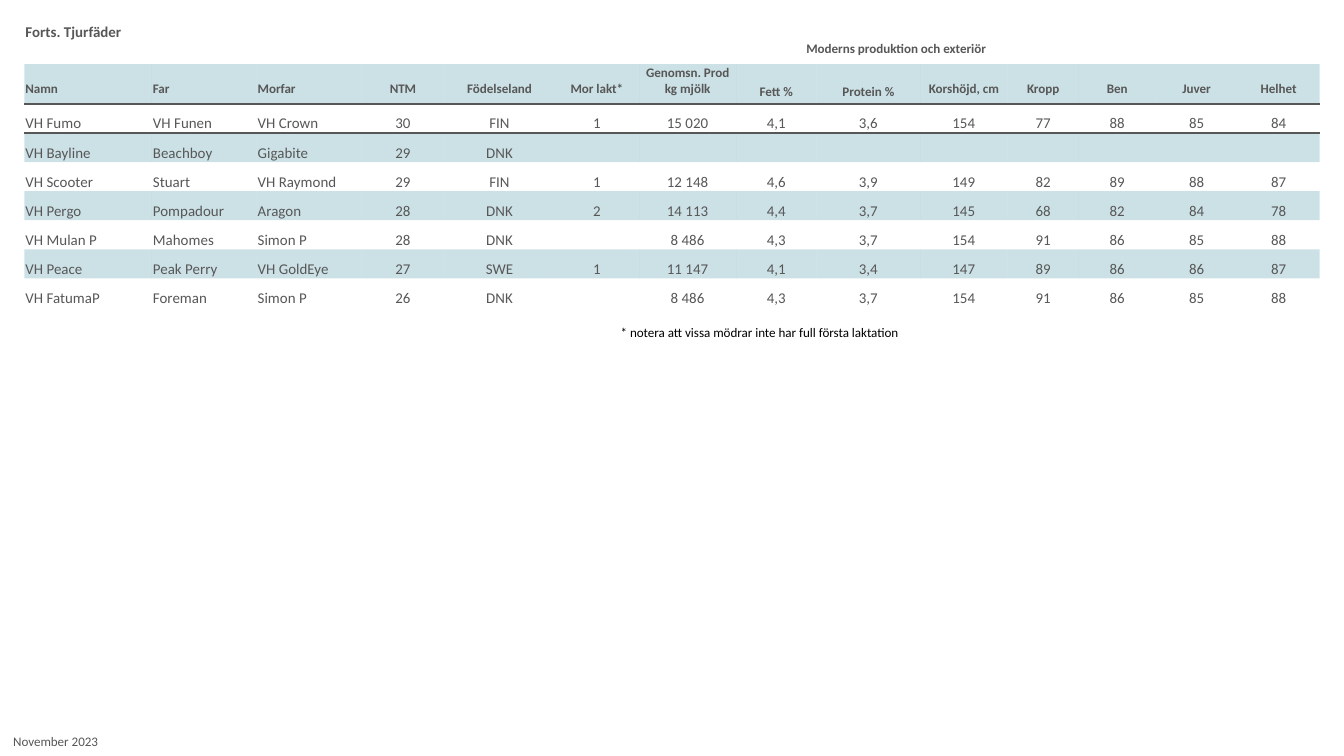
from lxml.etree import SubElement
from pptx import Presentation
from pptx.dml.color import RGBColor
from pptx.enum.text import MSO_ANCHOR as Anchor, PP_ALIGN as Align
from pptx.oxml import parse_xml
from pptx.oxml.ns import nsdecls, qn
from pptx.util import Cm, Pt

FONT = "Calibri"
GREY, TEAL, BLACK = "575757", "006B85", "000000"
PLAIN_STYLE = "{2D5ABB26-0587-4C30-8999-92F81FD0307C}"
TEXT_COLUMNS = 3

WIDTHS = [2.41, 1.98, 1.98, 1.57, 2.08, 1.6, 1.83, 1.52, 1.96, 1.65, 1.35, 1.45, 1.55, 1.55]
TITLE_HEIGHT, HEADER_HEIGHT, ROW_HEIGHT = 0.8, 0.75, 0.55
HEADERS = ["Namn", "Far", "Morfar", "NTM", "Födelseland", "Mor lakt*", "Genomsn. Prod kg mjölk",
           "Fett %", "Protein %", "Korshöjd, cm", "Kropp", "Ben", "Juver", "Helhet"]
BULLS = [
    ["VH Fumo", "VH Funen", "VH Crown", "30", "FIN", "1", "15 020", "4,1", "3,6", "154", "77", "88", "85", "84"],
    ["VH Bayline", "Beachboy", "Gigabite", "29", "DNK"] + [""] * 9,
    ["VH Scooter", "Stuart", "VH Raymond", "29", "FIN", "1", "12 148", "4,6", "3,9", "149", "82", "89", "88", "87"],
    ["VH Pergo", "Pompadour", "Aragon", "28", "DNK", "2", "14 113", "4,4", "3,7", "145", "68", "82", "84", "78"],
    ["VH Mulan P", "Mahomes", "Simon P", "28", "DNK", "", "8 486", "4,3", "3,7", "154", "91", "86", "85", "88"],
    ["VH Peace", "Peak Perry", "VH GoldEye", "27", "SWE", "1", "11 147", "4,1", "3,4", "147", "89", "86", "86", "87"],
    ["VH FatumaP", "Foreman", "Simon P", "26", "DNK", "", "8 486", "4,3", "3,7", "154", "91", "86", "85", "88"],
]


def rgb(color):
    return RGBColor.from_string(color)


def add_span(para, text, size, color=GREY, bold=False):
    span = para.add_run()
    span.text = text
    span.font.name = FONT
    span.font.size = Pt(size)
    span.font.bold = bold
    span.font.color.rgb = rgb(color)


def add_table(page, left, top, widths, heights):
    """Add a table without style, grid or fill."""
    frame = page.shapes.add_table(len(heights), len(widths), Cm(left), Cm(top),
                                  Cm(sum(widths)), Cm(sum(heights)))
    table = frame.table
    table.first_row = table.horz_banding = False
    frame._element.find(".//" + qn("a:tableStyleId")).text = PLAIN_STYLE
    for column, width in zip(table.columns, widths):
        column.width = Cm(width)
    for row, height in zip(table.rows, heights):
        row.height = Cm(height)
    for cell in table.iter_cells():
        cell.fill.background()
        cell.margin_left = cell.margin_right = cell.margin_top = Cm(0.02)
        cell.margin_bottom = 0
        cell.vertical_anchor = Anchor.BOTTOM
    return table


def write_cell(cell, text, size, bottom=0, align=Align.LEFT, color=GREY, bold=False):
    cell.margin_bottom = Cm(bottom)
    para = cell.text_frame.paragraphs[0]
    para.alignment = align
    add_span(para, text, size, color, bold)


def shrink_empty_cells(table):
    """Keep empty cells from stretching their rows."""
    for cell in table.iter_cells():
        if not cell.text_frame.text:
            SubElement(cell.text_frame.paragraphs[0]._p, qn("a:endParaRPr"), sz="700")


def tint_cell(cell):
    cell.fill.solid()
    cell.fill.fore_color.rgb = rgb(TEAL)
    color = cell._tc.tcPr.find(".//" + qn("a:srgbClr"))
    SubElement(color, qn("a:alpha"), val="20000")


def add_border(cell, side):
    line = parse_xml(f'<a:ln{side} {nsdecls("a")} w="{Pt(1)}"><a:solidFill>'
                     f'<a:srgbClr val="{GREY}"/></a:solidFill></a:ln{side}>')
    cell._tc.get_or_add_tcPr().insert(0, line)


def column_align(column):
    return Align.LEFT if column < TEXT_COLUMNS else Align.CENTER


def add_bull_table(page):
    heights = [TITLE_HEIGHT, HEADER_HEIGHT] + [ROW_HEIGHT] * len(BULLS)
    table = add_table(page, 0.46, 0.41, WIDTHS, heights)
    for first, last in ((0, 1), (3, 4), (5, 12)):
        table.cell(0, first).merge(table.cell(0, last))
    write_cell(table.cell(0, 0), "Forts. Tjurfäder", 8, 0.43, bold=True)
    write_cell(table.cell(0, 5), "Moderns produktion och exteriör", 7, 0.13, Align.CENTER, bold=True)

    for column, header in enumerate(HEADERS):
        cell = table.cell(1, column)
        bottom = 0.08 if header.endswith("%") else 0.13
        write_cell(cell, header, 7, bottom, column_align(column), bold=True)
        tint_cell(cell)
        add_border(cell, "B")
        add_border(table.cell(2, column), "T")

    for row, bull in enumerate(BULLS, start=2):
        for column, value in enumerate(bull):
            cell = table.cell(row, column)
            if value:
                write_cell(cell, value, 8, align=column_align(column))
            if row % 2:
                tint_cell(cell)
    shrink_empty_cells(table)


def add_note(page):
    table = add_table(page, 11.71, 6.1, [8.64], [0.48])
    write_cell(table.cell(0, 0), "* notera att vissa mödrar inte har full första laktation",
               7, 0.13, color=BLACK)


def add_date(page):
    box = page.shapes.add_textbox(0, Cm(13.74), Cm(4.88), Cm(0.55))
    box.text_frame.word_wrap = True
    add_span(box.text_frame.paragraphs[0], "November 2023", 7)


def main():
    deck = Presentation()
    deck.slide_width, deck.slide_height = Cm(25.4), Cm(14.29)
    page = deck.slides.add_slide(deck.slide_layouts[6])
    add_bull_table(page)
    add_date(page)
    add_note(page)
    deck.save("out.pptx")


if __name__ == "__main__":
    main()
